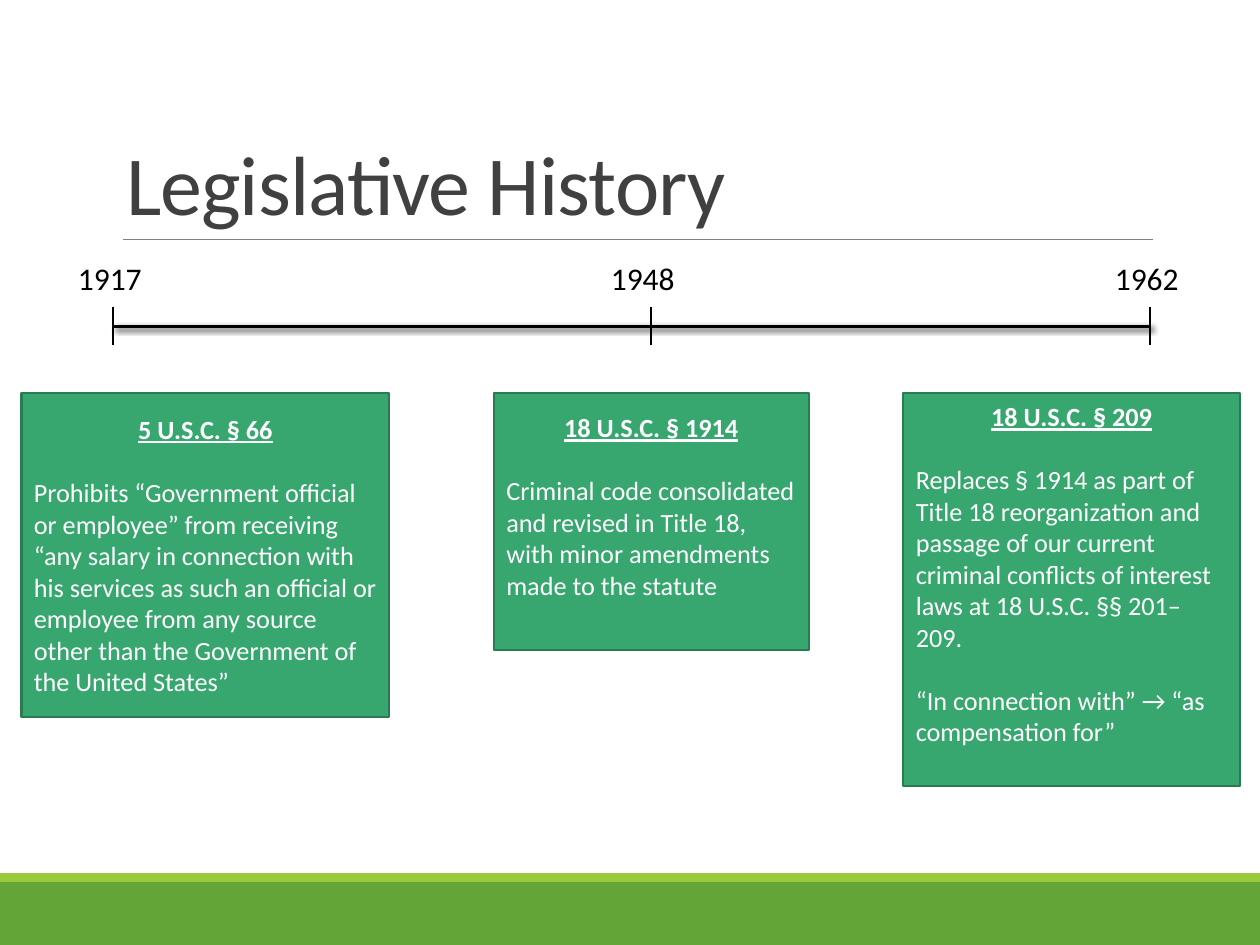
from dataclasses import dataclass

from lxml.etree import SubElement
from pptx import Presentation
from pptx.dml.color import RGBColor
from pptx.enum.shapes import MSO_CONNECTOR, MSO_SHAPE
from pptx.enum.text import MSO_ANCHOR, MSO_AUTO_SIZE, PP_ALIGN
from pptx.oxml.ns import qn
from pptx.util import Inches, Pt

FONT = "Calibri"
BLACK = RGBColor(0x00, 0x00, 0x00)
WHITE = RGBColor(0xFF, 0xFF, 0xFF)
GRAY = RGBColor(0x80, 0x80, 0x80)
DARK_GRAY = RGBColor(0x40, 0x40, 0x40)
CARD_FILL = RGBColor(0x37, 0xA7, 0x6F)
CARD_LINE = RGBColor(0x29, 0x7C, 0x52)
GREEN = RGBColor(0x63, 0xA5, 0x37)
LIGHT_GREEN = RGBColor(0x99, 0xCB, 0x38)

AXIS_Y = 2.59
TICK_HALF = 0.15
LABEL_TOP = 2.01
CARD_TOP = 3.12
LINE_GAP = Pt(18)


@dataclass
class Milestone:
    year: str
    tick_x: float
    label_x: float
    label_width: float
    card_x: float
    card_width: float
    card_height: float
    statute: str
    body: list[str]
    bottom_inset: float = 0.05


MILESTONES = [
    Milestone("1917", 0.9, 0.52, 0.76, 0.17, 2.92, 2.57, "5 U.S.C. § 66", [
        "Prohibits “Government official or employee” from receiving “any salary "
        "in connection with his services as such an official or employee from any "
        "source other than the Government of the United States”"]),
    Milestone("1948", 5.17, 4.75, 0.83, 3.92, 2.5, 2.04, "18 U.S.C. § 1914", [
        "Criminal code consolidated and revised in Title 18, with minor "
        "amendments made to the statute"], 0.3),
    Milestone("1962", 9.13, 8.75, 0.76, 7.17, 2.67, 3.12, "18 U.S.C. § 209", [
        "Replaces § 1914 as part of Title 18 reorganization and passage of our "
        "current criminal conflicts of interest laws at 18 U.S.C. §§ 201–209.",
        "“In connection with” → “as compensation for”"], 0.3),
]


def style_runs(p, size: float, color: RGBColor) -> None:
    for r in p.runs:
        r.font.name = FONT
        r.font.size = Pt(size)
        r.font.color.rgb = color


def add_rect(s, x: float, y: float, w: float, h: float, fill: RGBColor):
    sp = s.shapes.add_shape(MSO_SHAPE.RECTANGLE, Inches(x), Inches(y), Inches(w), Inches(h))
    sp.shadow.inherit = False
    sp.fill.solid()
    sp.fill.fore_color.rgb = fill
    sp.line.fill.background()
    return sp


def add_line(s, x1: float, y1: float, x2: float, y2: float, color: RGBColor, width: float):
    """Draw a straight line and return its empty effect list."""
    line = s.shapes.add_connector(
        MSO_CONNECTOR.STRAIGHT, Inches(x1), Inches(y1), Inches(x2), Inches(y2))
    line.line.color.rgb = color
    line.line.width = Pt(width)
    return SubElement(line._element.spPr, qn("a:effectLst"))


def add_shadow(effects) -> None:
    shadow = SubElement(effects, qn("a:outerShdw"), blurRad=str(Pt(3)), dist=str(Pt(2)),
                        dir="2700000", algn="tl", rotWithShape="0")
    color = SubElement(shadow, qn("a:srgbClr"), val=str(BLACK))
    SubElement(color, qn("a:alpha"), val="60000")


def add_title(s, text: str) -> None:
    title = s.shapes.title
    title.left, title.top = Inches(0.9), Inches(0.31)
    title.width, title.height = Inches(8.25), Inches(1.59)
    tf = title.text_frame
    tf.text = text
    tf.word_wrap = True
    tf.auto_size = MSO_AUTO_SIZE.NONE
    tf.vertical_anchor = MSO_ANCHOR.BOTTOM
    p = tf.paragraphs[0]
    p.alignment = PP_ALIGN.LEFT
    p.line_spacing = 0.85
    style_runs(p, 48, DARK_GRAY)
    p.runs[0].font._element.set("spc", "-50")


def add_card(s, m: Milestone) -> None:
    card = add_rect(s, m.card_x, CARD_TOP, m.card_width, m.card_height, CARD_FILL)
    card.line.color.rgb = CARD_LINE
    card.line.width = Pt(1.25)
    tf = card.text_frame
    tf.word_wrap = True
    tf.vertical_anchor = MSO_ANCHOR.MIDDLE
    tf.margin_bottom = Inches(m.bottom_inset)
    tf.text = m.statute
    heading = tf.paragraphs[0]
    heading.alignment = PP_ALIGN.CENTER
    style_runs(heading, 15, WHITE)
    heading.runs[0].font.bold = True
    heading.runs[0].font.underline = True
    for text in m.body:
        p = tf.add_paragraph()
        p.text = text
        p.alignment = PP_ALIGN.LEFT
        p.space_before = LINE_GAP
        style_runs(p, 15, WHITE)


def add_year(s, m: Milestone) -> None:
    add_line(s, m.tick_x, AXIS_Y - TICK_HALF, m.tick_x, AXIS_Y + TICK_HALF, BLACK, 1.25)
    label = s.shapes.add_textbox(
        Inches(m.label_x), Inches(LABEL_TOP), Inches(m.label_width), Inches(0.4))
    tf = label.text_frame
    tf.text = m.year
    tf.word_wrap = False
    tf.auto_size = MSO_AUTO_SIZE.SHAPE_TO_FIT_TEXT
    style_runs(tf.paragraphs[0], 18, BLACK)


def main() -> None:
    prs = Presentation()
    prs.slide_width, prs.slide_height = Inches(10), Inches(7.5)
    s = prs.slides.add_slide(prs.slide_layouts[5])

    add_rect(s, 0, 7, 10, 0.5, GREEN)
    add_rect(s, 0, 6.93, 10, 0.07, LIGHT_GREEN)
    add_line(s, 0.98, 1.9, 9.15, 1.9, GRAY, 0.5)
    add_title(s, "Legislative History")

    add_shadow(add_line(s, MILESTONES[0].tick_x, AXIS_Y, MILESTONES[-1].tick_x, AXIS_Y, BLACK, 2))
    for m in MILESTONES:
        add_year(s, m)
        add_card(s, m)

    prs.save("out.pptx")


if __name__ == "__main__":
    main()
